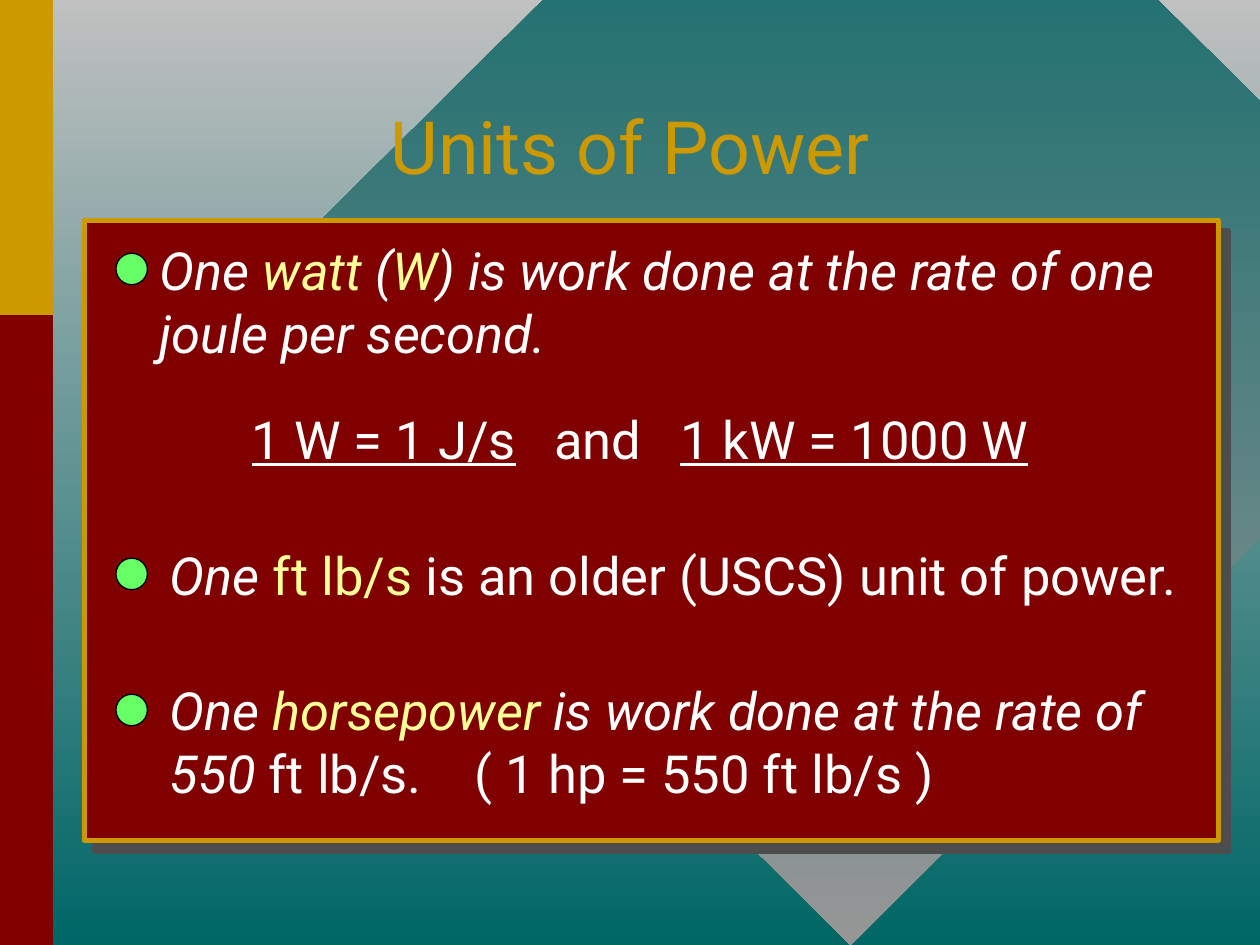
from lxml.etree import SubElement
from pptx import Presentation
from pptx.dml.color import RGBColor
from pptx.enum.shapes import MSO_SHAPE
from pptx.enum.text import MSO_ANCHOR, MSO_AUTO_SIZE, PP_ALIGN
from pptx.oxml.ns import qn
from pptx.util import Inches, Pt

TEAL = RGBColor(0x00, 0x66, 0x66)
SILVER = RGBColor(0xC0, 0xC0, 0xC0)
GRAY = RGBColor(0x96, 0x96, 0x96)
MAROON = RGBColor(0x80, 0x00, 0x00)
GOLD = RGBColor(0xCC, 0x99, 0x00)
GREEN = RGBColor(0x66, 0xFF, 0x66)
YELLOW = RGBColor(0xFF, 0xFF, 0x99)
WHITE = RGBColor(0xFF, 0xFF, 0xFF)
BLACK = RGBColor(0x00, 0x00, 0x00)
FONT = "Roboto"


def add_block(shapes, kind, box, color=None):
    block = shapes.add_shape(kind, *[Inches(v) for v in box])
    block.shadow.inherit = False
    block.line.fill.background()
    if color is not None:
        block.fill.solid()
        block.fill.fore_color.rgb = color
    return block


def add_text(shapes, box, runs, tabs=()):
    """Add one paragraph; each run is text, color, italic, underline."""
    frame = shapes.add_textbox(*[Inches(v) for v in box]).text_frame
    frame.word_wrap = True
    frame.auto_size = MSO_AUTO_SIZE.SHAPE_TO_FIT_TEXT
    frame.vertical_anchor = MSO_ANCHOR.MIDDLE
    para = frame.paragraphs[0]
    para.font.size = Pt(30)
    para.font.name = FONT
    for text, color, slant, under in runs:
        run = para.add_run()
        run.text = text
        run.font.size = Pt(30)
        run.font.name = FONT
        run.font.color.rgb = color
        run.font.italic = slant
        run.font.underline = under
    if tabs:
        stops = SubElement(para._p.get_or_add_pPr(), qn("a:tabLst"))
        for stop in tabs:
            SubElement(stops, qn("a:tab"), pos=str(Inches(stop)), algn="l")
    return frame


deck = Presentation()
deck.slide_width = Inches(10)
deck.slide_height = Inches(7.5)
slide = deck.slides.add_slide(deck.slide_layouts[5])
shapes = slide.shapes

# Background and diamond, both shaded from top to bottom
diamond = add_block(shapes, MSO_SHAPE.DIAMOND, (1.75, -2.42, 10, 9.92))
for fill, colors in ((slide.background.fill, (SILVER, TEAL)),
                     (diamond.fill, (TEAL, GRAY))):
    fill.gradient()
    fill.gradient_angle = 270
    for stop, color, place in zip(fill.gradient_stops, colors, (0, 1)):
        stop.color.rgb = color
        stop.position = place

# Side bar
add_block(shapes, MSO_SHAPE.RECTANGLE, (0, 0, 0.42, 7.5), MAROON)
add_block(shapes, MSO_SHAPE.RECTANGLE, (0, 0, 0.42, 2.5), GOLD)

# Panel with a hard shadow
panel = add_block(shapes, MSO_SHAPE.RECTANGLE, (0.67, 1.75, 9, 4.92), MAROON)
panel.line.color.rgb = GOLD
panel.line.width = Pt(3)
effects = panel._element.spPr.find(qn("a:effectLst"))
shadow = SubElement(effects, qn("a:outerShdw"), blurRad="0",
                    dist=str(Pt(8.5)), dir=str(45 * 60000),
                    algn="ctr", rotWithShape="0")
SubElement(shadow, qn("a:srgbClr"), val="4D4D4D")

# Title, brought in front of the backdrop
title = shapes.title
title.left, title.top = Inches(1), Inches(0.58)
title.width, title.height = Inches(8), Inches(1.25)
title.text = "Units of Power"
title.text_frame.vertical_anchor = MSO_ANCHOR.MIDDLE
head = title.text_frame.paragraphs[0]
head.alignment = PP_ALIGN.CENTER
head.line_spacing = 0.85
head.font.size = Pt(42)
head.font.name = FONT
head.font.color.rgb = GOLD
panel._element.addnext(title._element)

# Equations
frame = add_text(shapes, (1.58, 3.18, 7, 0.6), [
    ("1 W = 1 J/s", WHITE, False, True),
    ("\tand\t", WHITE, False, False),
    ("1 kW = 1000 W", WHITE, False, True),
], tabs=(2.4, 3.4))
frame.margin_left = Inches(0.42)

# Definitions, each grouped with its dot
items = [
    ((1.17, 1.84, 8.25, 1.1), 2.01, [
        ("One ", WHITE, True, False),
        ("watt ", YELLOW, True, False),
        ("(", WHITE, True, False),
        ("W", YELLOW, True, False),
        (") is work done at the rate of one joule per second.",
         WHITE, True, False)], ()),
    ((1.25, 4.26, 8.42, 0.6), 4.43, [
        ("One ", WHITE, True, False),
        ("ft lb/s ", YELLOW, False, False),
        ("is an older (USCS) unit of power.", WHITE, False, False)], ()),
    ((1.25, 5.33, 8.42, 1.1), 5.51, [
        ("One ", WHITE, True, False),
        ("horsepower", YELLOW, True, False),
        (" is work done at the rate of 550 ", WHITE, True, False),
        ("ft lb/s.\t( 1 hp = 550 ft lb/s )", WHITE, False, False)], (2.42,)),
]
for box, top, runs, tabs in items:
    group = shapes.add_group_shape()
    add_text(group.shapes, box, runs, tabs)
    dot = add_block(group.shapes, MSO_SHAPE.OVAL, (0.92, top, 0.25, 0.25), GREEN)
    dot.line.color.rgb = BLACK
    dot.line.width = Pt(0.75)

deck.save("out.pptx")
